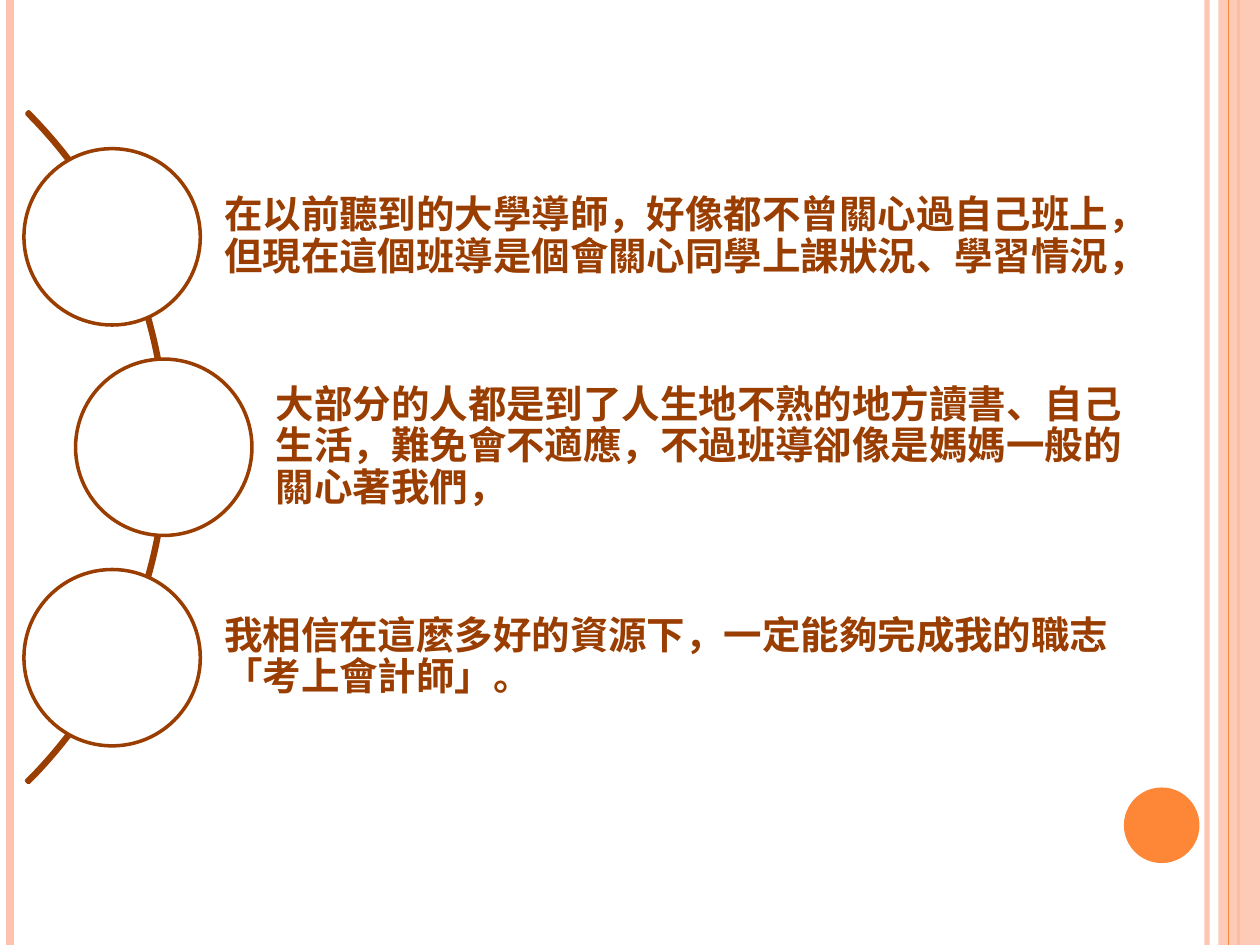
from lxml.etree import SubElement
from pptx import Presentation
from pptx.dml.color import RGBColor
from pptx.enum.shapes import MSO_CONNECTOR, MSO_SHAPE
from pptx.enum.text import MSO_ANCHOR, PP_ALIGN
from pptx.oxml.ns import qn
from pptx.util import Inches, Pt

WHITE = RGBColor(0xFF, 0xFF, 0xFF)
PEACH = RGBColor(0xFE, 0xC3, 0xAE)
ORANGE = RGBColor(0xFE, 0x86, 0x37)
BROWN = RGBColor(0x9A, 0x3D, 0x01)
FONT = "Noto Sans CJK SC"
WIDTH, HEIGHT = 10, 7.5

# Text and horizontal centre of its circle
POINTS = [
    ("在以前聽到的大學導師，好像都不曾關心過自己班上，但現在這個班導是個會關心同學上課狀況、學習情況，", 0.89),
    ("大部分的人都是到了人生地不熟的地方讀書、自己生活，難免會不適應，不過班導卻像是媽媽一般的關心著我們，", 1.3),
    ("我相信在這麼多好的資源下，一定能夠完成我的職志「考上會計師」。", 0.89),
]
MIDDLE_Y, PITCH = 3.55, 1.67
CIRCLE, BAND_HEIGHT, BAND_RIGHT = 1.4, 1.12, 9.25
ARC_LEFT, ARC_SIZE = -6.2, 7.53

# x, colour, width in points, opacity in percent
STRIPES_BELOW = [(9.58, PEACH, 3, 93), (0.08, PEACH, 4.5, 100), (9.83, ORANGE, 1.5, 100)]
STRIPES_ABOVE = [(9.75, ORANGE, 0.75, 100)]


def set_opacity(element, percent):
    color = next(element.iter(qn("a:srgbClr")))
    SubElement(color, qn("a:alpha"), val=str(percent * 1000))


def add_stripes(page, stripes):
    for x, color, width, opacity in stripes:
        stripe = page.shapes.add_connector(
            MSO_CONNECTOR.STRAIGHT, Inches(x), 0, Inches(x), Inches(HEIGHT))
        stripe.line.color.rgb = color
        stripe.line.width = Pt(width)
        properties = stripe._element.spPr
        if opacity < 100:
            set_opacity(properties, opacity)
        SubElement(properties, qn("a:effectLst"))


def add_shape(page, kind, left, top, width, height, fill=None, line=None):
    shape = page.shapes.add_shape(
        kind, Inches(left), Inches(top), Inches(width), Inches(height))
    shape.shadow.inherit = False
    if fill is None:
        shape.fill.background()
    else:
        shape.fill.solid()
        shape.fill.fore_color.rgb = fill
    if line is None:
        shape.line.fill.background()
    else:
        shape.line.color.rgb = line
        shape.line.width = Pt(2)
    return shape


def write_point(band, text):
    frame = band.text_frame
    frame.text = text
    frame.word_wrap = True
    frame.vertical_anchor = MSO_ANCHOR.MIDDLE
    frame.margin_left = Inches(0.89)
    frame.margin_top = frame.margin_right = frame.margin_bottom = Inches(0.06)
    para = frame.paragraphs[0]
    para.alignment = PP_ALIGN.LEFT
    para.line_spacing = 0.9
    span = para.runs[0]
    span.font.size = Pt(22)
    span.font.bold = True
    span.font.color.rgb = BROWN
    span.font.name = FONT
    SubElement(span.font._element, qn("a:ea"), typeface=FONT)


def add_point(page, text, center_x, center_y):
    band = add_shape(page, MSO_SHAPE.RECTANGLE, center_x, center_y - BAND_HEIGHT / 2,
                     BAND_RIGHT - center_x, BAND_HEIGHT, fill=WHITE)
    write_point(band, text)
    add_shape(page, MSO_SHAPE.OVAL, center_x - CIRCLE / 2, center_y - CIRCLE / 2,
              CIRCLE, CIRCLE, fill=WHITE, line=BROWN)


def main():
    deck = Presentation()
    deck.slide_width, deck.slide_height = Inches(WIDTH), Inches(HEIGHT)
    page = deck.slides.add_slide(deck.slide_layouts[6])

    add_stripes(page, STRIPES_BELOW)
    side_bar = add_shape(page, MSO_SHAPE.RECTANGLE, 9.67, 0, 0.33, HEIGHT, fill=PEACH)
    set_opacity(side_bar._element.spPr, 87)
    add_stripes(page, STRIPES_ABOVE)
    add_shape(page, MSO_SHAPE.OVAL, 8.92, 6.25, 0.6, 0.6, fill=ORANGE)

    arc = add_shape(page, MSO_SHAPE.BLOCK_ARC, ARC_LEFT, MIDDLE_Y - ARC_SIZE / 2,
                    ARC_SIZE, ARC_SIZE, line=BROWN)
    # Start angle 315°, end angle 45°, thickness as a share of the size
    for index, value in enumerate((189, 27, 0.003)):
        arc.adjustments[index] = value

    for index, (text, center_x) in enumerate(POINTS):
        add_point(page, text, center_x, MIDDLE_Y + (index - 1) * PITCH)

    deck.save("out.pptx")


if __name__ == "__main__":
    main()
